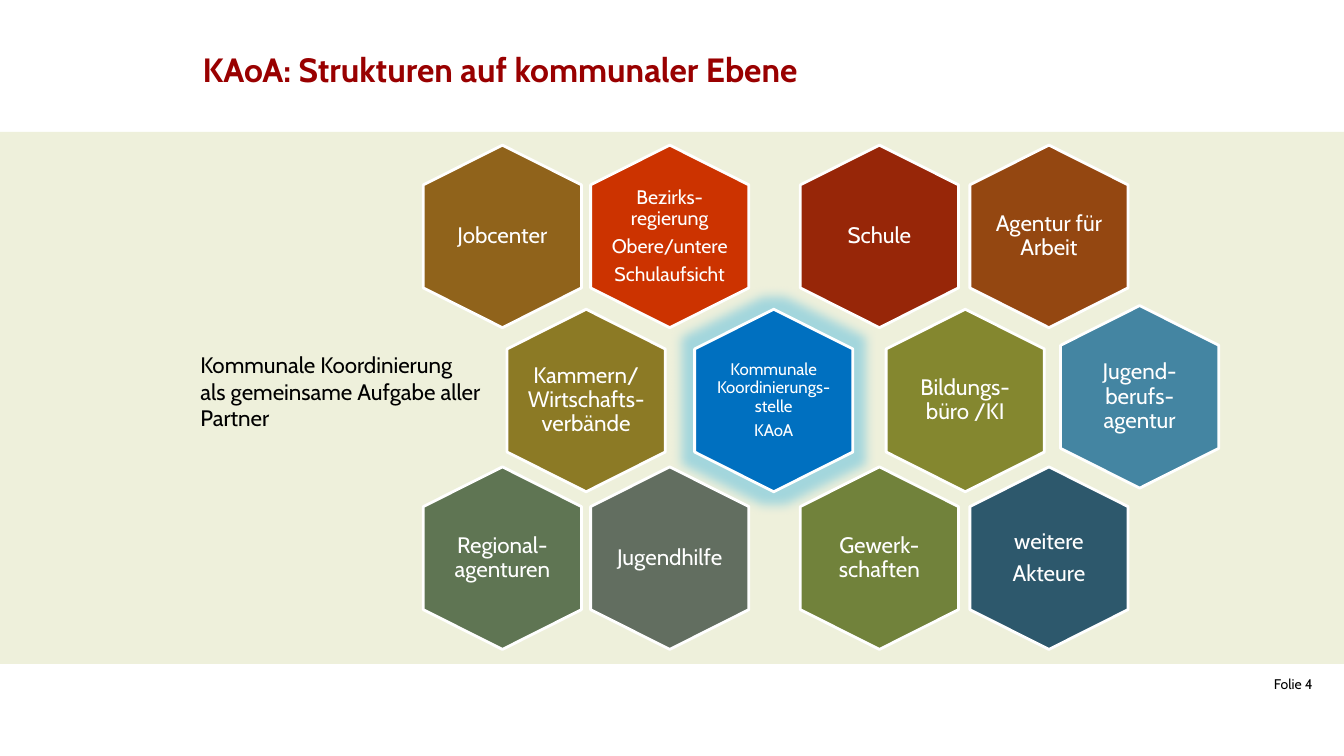
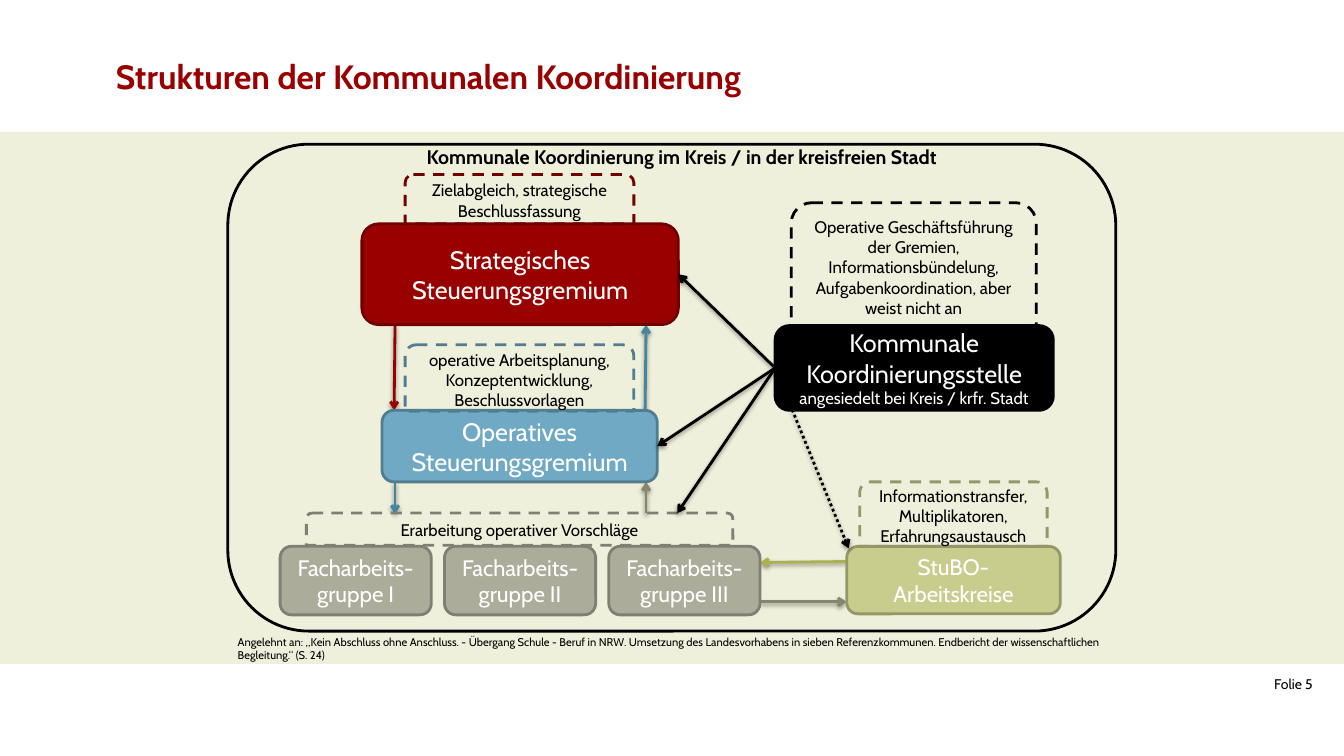
from lxml.etree import SubElement
from pptx import Presentation
from pptx.dml.color import RGBColor
from pptx.enum.dml import MSO_LINE
from pptx.enum.shapes import MSO_CONNECTOR, MSO_SHAPE
from pptx.enum.text import MSO_ANCHOR, MSO_AUTO_SIZE, PP_ALIGN
from pptx.oxml.ns import qn
from pptx.util import Pt

FONT = "Cabin"
BLACK, WHITE, BAND = "000000", "FFFFFF", "EEF0DB"
RED, DARK_RED = "990000", "710000"
BLUE, LIGHT_BLUE, DARK_BLUE = "4485A2", "6FA9C3", "527D90"
GREY, DARK_GREY, ARROW_GREY = "ACAC9B", "7F7F73", "86866F"
GREEN, DARK_GREEN, ARROW_GREEN = "C8CC8D", "949768", "ABB151"
SLIDE_WIDTH, SLIDE_HEIGHT = 960, 540
HEX_WIDTH, HEX_HEIGHT, HEX_SHOULDER = 113, 130.4, 28.4


# Shared helpers
def rgb(value):
    return RGBColor.from_string(value)


def points(*lengths):
    return [Pt(length) for length in lengths]


def write(frame, paragraphs, color=BLACK, align=PP_ALIGN.LEFT, bold=False,
          anchor=MSO_ANCHOR.TOP):
    """Fill a text frame with (text, size) paragraphs; a newline is a line break."""
    frame.word_wrap = True
    frame.auto_size = MSO_AUTO_SIZE.NONE
    frame.vertical_anchor = anchor
    for index, (text, size) in enumerate(paragraphs):
        paragraph = frame.add_paragraph() if index else frame.paragraphs[0]
        paragraph.alignment = align
        for number, line in enumerate(text.split("\n")):
            if number:
                paragraph.add_line_break()
            run = paragraph.add_run()
            run.text = line
            run.font.name, run.font.size = FONT, Pt(size)
            run.font.bold = bold
            run.font.color.rgb = rgb(color)


def add_text(slide, box, text, size, **style):
    label = slide.shapes.add_textbox(*points(*box))
    write(label.text_frame, [(text, size)], **style)


def paint(shape, fill=None, line=None, dash=None):
    shape.shadow.inherit = False
    if fill:
        shape.fill.solid()
        shape.fill.fore_color.rgb = rgb(fill)
    else:
        shape.fill.background()
    if line:
        shape.line.color.rgb = rgb(line)
        shape.line.width = Pt(2)
        if dash:
            shape.line.dash_style = dash
    else:
        shape.line.fill.background()


def add_box(slide, kind, box, fill=None, line=None, dash=None):
    shape = slide.shapes.add_shape(kind, *points(*box))
    paint(shape, fill, line, dash)
    return shape


def add_effect(shape, kind, color, opacity, **settings):
    effects = shape.element.spPr.find(qn("a:effectLst"))
    if effects is None:
        effects = SubElement(shape.element.spPr, qn("a:effectLst"))
    effect = SubElement(effects, qn("a:" + kind))
    for name, value in settings.items():
        effect.set(name, str(int(value)))
    tint = SubElement(effect, qn("a:srgbClr"), val=color)
    SubElement(tint, qn("a:alpha"), val=str(opacity * 1000))


def add_arrow(slide, start, end, color, dash=None):
    arrow = slide.shapes.add_connector(MSO_CONNECTOR.STRAIGHT, *points(*start, *end))
    arrow.line.color.rgb = rgb(color)
    arrow.line.width = Pt(2)
    if dash:
        arrow.line.dash_style = dash
    SubElement(arrow.element.spPr.find(qn("a:ln")), qn("a:tailEnd"), type="arrow")
    add_effect(arrow, "outerShdw", BLACK, 38, blurRad=Pt(3.1), dist=Pt(1.6),
               dir=90 * 60000, rotWithShape=0)
    return arrow


def add_slide(prs, title, title_box, title_anchor, number):
    """Title, coloured band and slide number."""
    slide = prs.slides.add_slide(prs.slide_layouts[5])
    heading = slide.shapes.title
    heading.left, heading.top, heading.width, heading.height = points(*title_box)
    write(heading.text_frame, [(title, 24)], color=RED, bold=True, anchor=title_anchor)
    add_box(slide, MSO_SHAPE.RECTANGLE, (0, 94.3, SLIDE_WIDTH, 380), BAND)
    add_text(slide, (720.7, 473.8, 224, 28.8), f"Folie {number}", 10,
             align=PP_ALIGN.RIGHT, anchor=MSO_ANCHOR.MIDDLE)
    return slide


# Partner slide
PARTNERS = [  # left, top, fill, text size, paragraphs
    (0, 0, "90631B", 16, ["Jobcenter"]),
    (119.5, 0, "CC3300", 14, ["Bezirks-regierung", "Obere/untere", "Schulaufsicht"]),
    (269.3, 0, "972608", 16, ["Schule"]),
    (390.4, 0, "944711", 16, ["Agentur für Arbeit"]),
    (59.8, 117.2, "8C7A25", 16, ["Kammern/ Wirtschafts-verbände"]),
    (330.6, 117.2, "84872F", 16, ["Bildungs-büro /KI"]),
    (455.2, 114.6, BLUE, 16, ["Jugend-berufs-agentur"]),
    (0, 229.8, "5F7553", 16, ["Regional-agenturen"]),
    (119.5, 229.8, "626E60", 16, ["Jugendhilfe"]),
    (269.3, 229.8, "71823B", 16, ["Gewerk-schaften"]),
    (390.4, 229.8, "2D586C", 16, ["weitere", "Akteure"]),
]
COORDINATION = (193.8, 117.2, "0070C0", 12,
                ["Kommunale Koordinierungs-stelle", "KAoA"])


def add_hexagon(slide, left, top, fill, size, texts):
    right, bottom, middle = left + HEX_WIDTH, top + HEX_HEIGHT, left + HEX_WIDTH / 2
    upper, lower = top + HEX_SHOULDER, bottom - HEX_SHOULDER
    outline = slide.shapes.build_freeform(Pt(middle), Pt(top), scale=1)
    corners = [(right, upper), (right, lower), (middle, bottom),
               (left, lower), (left, upper)]
    outline.add_line_segments([points(*corner) for corner in corners], close=True)
    hexagon = outline.convert_to_shape()
    paint(hexagon, fill, WHITE)
    frame = hexagon.text_frame
    frame.margin_left = frame.margin_right = Pt(12.5)
    frame.margin_top = frame.margin_bottom = Pt(14)
    write(frame, [(text, size) for text in texts], WHITE, PP_ALIGN.CENTER,
          anchor=MSO_ANCHOR.MIDDLE)
    for paragraph in frame.paragraphs:
        paragraph.line_spacing = 0.9
        paragraph.space_after = Pt(0.35 * size)
    return hexagon


def add_partner_field(slide, left, top):
    for x, y, *partner in [COORDINATION] + PARTNERS:
        hexagon = add_hexagon(slide, left + x, top + y, *partner)
        if (x, y) == COORDINATION[:2]:
            add_effect(hexagon, "glow", "33B0E0", 40, rad=Pt(16))


def partner_slide(prs):
    slide = add_slide(prs, "KAoA: Strukturen auf kommunaler Ebene",
                      (137.5, 16.6, 680.4, 65.5), MSO_ANCHOR.MIDDLE, 4)
    add_partner_field(slide, 302.4, 103.7)
    add_text(slide, (136.1, 247, 216, 65.5),
             "Kommunale Koordinierung\nals gemeinsame Aufgabe aller Partner", 16)


# Structure slide: all places are relative to the frame
STRATEGIC, OPERATIVE, OFFICE, CIRCLES = range(4)
BODIES = [  # box, fill, line, paragraphs
    ((95.8, 56.9, 226.1, 72), RED, DARK_RED, [("Strategisches Steuerungsgremium", 18)]),
    ((110.2, 190.1, 196.6, 51.1), LIGHT_BLUE, DARK_BLUE,
     [("Operatives Steuerungsgremium", 18)]),
    ((391, 129.6, 198.7, 60.5), BLACK, BLACK,
     [("Kommunale Koordinierungsstelle", 18),
      ("angesiedelt bei Kreis / krfr. Stadt", 12)]),
    ((442.1, 287.3, 152.6, 48.2), GREEN, DARK_GREEN, [("StuBO-Arbeitskreise", 16)]),
] + [((37.4 + 117.4 * index, 287.2, 108, 49), GREY, DARK_GREY,
      [(f"Facharbeits-gruppe {numeral}", 16)])
     for index, numeral in enumerate(["I", "II", "III"])]
TASKS = [  # box, line, paragraphs
    ((126.7, 21.6, 163.4, 35.3), DARK_RED, ["Zielabgleich, strategische Beschlussfassung"]),
    ((126.7, 143.3, 163.4, 47.5), DARK_BLUE,
     ["operative Arbeitsplanung, Konzeptentwicklung, Beschlussvorlagen"]),
    ((56.2, 263.5, 304.6, 23), DARK_GREY, ["Erarbeitung operativer Vorschläge"]),
    ((451.4, 241.2, 133.9, 46.1), DARK_GREEN,
     ["Informationstransfer,", "Multiplikatoren,", "Erfahrungsaustausch"]),
    ((402.5, 41.8, 175, 87.8), BLACK,
     ["Operative Geschäftsführung der Gremien, Informationsbündelung, "
      "Aufgabenkoordination, aber weist nicht an"]),
]
EXCHANGES = [  # start, end, colour
    ((442.1, 298.1), (380.2, 298.8), ARROW_GREEN),
    ((119.5, 128.9), (118.8, 190.1), RED),
    ((298.1, 190.1), (298.8, 128.9), BLUE),
    ((119.5, 241.2), (119.5, 264.2), BLUE),
    ((298.8, 263.5), (298.8, 241.2), ARROW_GREY),
    ((380.2, 326.9), (442.1, 326.9), ARROW_GREY),
]
OFFICE_LINKS = [  # end, dash, joined body
    ((321.9, 92.9), None, STRATEGIC),
    ((306.8, 215.6), None, OPERATIVE),
    ((321.1, 263.5), None, None),
    ((443.5, 288.7), MSO_LINE.ROUND_DOT, None),
]


def add_structure(slide, left, top, width, height):
    def place(x, y, *size):
        return (left + x, top + y, *size)

    for start, end, color in EXCHANGES:
        add_arrow(slide, place(*start), place(*end), color)
    add_box(slide, MSO_SHAPE.ROUNDED_RECTANGLE, (left, top, width, height), line=BLACK)

    # Bodies and their tasks
    bodies = []
    for box, fill, line, paragraphs in BODIES:
        body = add_box(slide, MSO_SHAPE.ROUNDED_RECTANGLE, place(*box), fill, line)
        write(body.text_frame, paragraphs, WHITE, PP_ALIGN.CENTER,
              anchor=MSO_ANCHOR.MIDDLE)
        bodies.append(body)
    for box, line, texts in TASKS:
        task = add_box(slide, MSO_SHAPE.ROUND_2_SAME_RECTANGLE, place(*box),
                       line=line, dash=MSO_LINE.DASH)
        write(task.text_frame, [(text, 12) for text in texts], BLACK,
              PP_ALIGN.CENTER, anchor=MSO_ANCHOR.MIDDLE)

    # Links from the coordination office
    for end, dash, target in OFFICE_LINKS:
        link = add_arrow(slide, place(391, 159.8), place(*end), BLACK, dash)
        link.begin_connect(bodies[OFFICE], 1)
        if target is not None:
            link.end_connect(bodies[target], 3)

    # Heading and reference
    add_text(slide, place(79.2, -2.9, 490.3, 24.5),
             "Kommunale Koordinierung im Kreis / in der kreisfreien Stadt", 14,
             align=PP_ALIGN.CENTER, bold=True)
    add_text(slide, place(0, height - 0.8, width, 26.6),
             "Angelehnt an: „Kein Abschluss ohne Anschluss. - Übergang Schule - Beruf "
             "in NRW. Umsetzung des Landesvorhabens in sieben Referenzkommunen. "
             "Endbericht der wissenschaftlichen Begleitung.“ (S. 24)", 8)


def structure_slide(prs):
    slide = add_slide(prs, "Strukturen der Kommunalen Koordinierung",
                      (75.6, 36, 907.2, 43.2), MSO_ANCHOR.TOP, 5)
    add_structure(slide, 162.7, 103, 634.3, 347.8)


def main():
    prs = Presentation()
    prs.slide_width, prs.slide_height = points(SLIDE_WIDTH, SLIDE_HEIGHT)
    partner_slide(prs)
    structure_slide(prs)
    prs.save("out.pptx")


if __name__ == "__main__":
    main()
